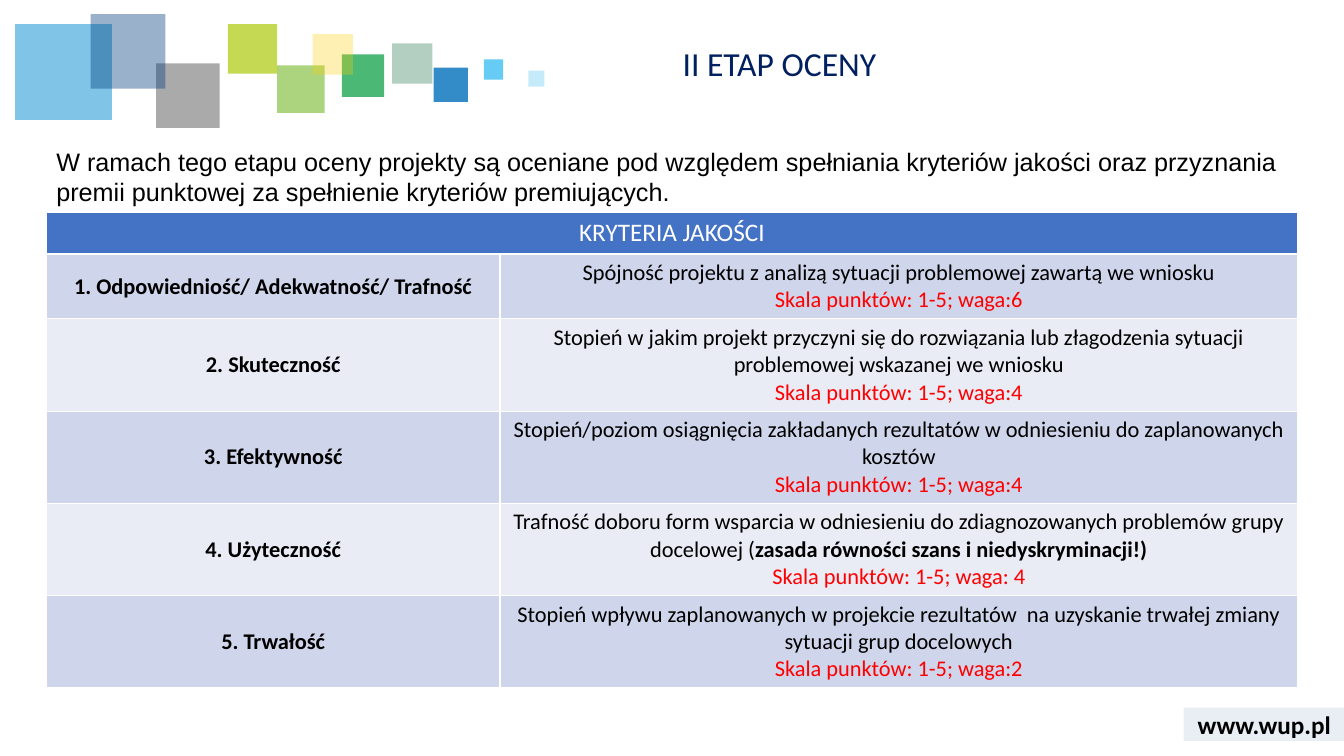
from dataclasses import dataclass

from lxml import etree
from pptx import Presentation
from pptx import util as u
from pptx.dml.color import RGBColor
from pptx.enum import shapes, text
from pptx.oxml.ns import qn

PX = 9144  # EMU per px, 100 px to the inch


@dataclass(frozen=True)
class Theme:
    ink: str = "000000"
    white: str = "FFFFFF"
    navy: str = "002060"
    red: str = "FF0000"
    head: str = "4472C4"
    bands: tuple[str, str] = ("CFD5EA", "E9EBF5")
    bar: str = "2F5597"
    sans: str = "Calibri"
    plain: str = "Arial"
    title: int = 24
    body: int = 18
    cell: int = 16


@dataclass(frozen=True)
class Tile:
    x: int
    y: int
    w: int
    h: int
    color: str
    alpha: int  # opacity in percent


@dataclass(frozen=True)
class Rule:
    name: str
    desc: str
    scale: str
    stress: str = ""


THEME = Theme()

TILES = [
    Tile(389, 43, 40, 40, "006138", 30),
    Tile(430, 67, 34, 34, "006EB9", 80),
    Tile(339, 54, 42, 42, "009A3C", 70),
    Tile(15, 24, 96, 95, "028BD3", 50),
    Tile(275, 65, 47, 47, "75B82A", 60),
    Tile(155, 63, 63, 64, "575757", 50),
    Tile(90, 14, 74, 74, "003D7C", 40),
    Tile(480, 59, 19, 20, "40C0F1", 80),
    Tile(226, 24, 49, 49, "AFCA0B", 70),
    Tile(310, 34, 40, 40, "FED000", 30),
    Tile(524, 70, 16, 16, "40C0F1", 30),
]
BAR = Tile(1174, 702, 160, 33, THEME.bar, 10)

RULES = [
    Rule("1. Odpowiedniość/ Adekwatność/ Trafność",
         "Spójność projektu z analizą sytuacji problemowej zawartą we wniosku",
         "Skala punktów: 1-5; waga:6"),
    Rule("2. Skuteczność",
         "Stopień w jakim projekt przyczyni się do rozwiązania lub złagodzenia "
         "sytuacji problemowej wskazanej we wniosku",
         "Skala punktów: 1-5; waga:4"),
    Rule("3. Efektywność",
         "Stopień/poziom osiągnięcia zakładanych rezultatów w odniesieniu do "
         "zaplanowanych kosztów",
         "Skala punktów: 1-5; waga:4"),
    Rule("4. Użyteczność",
         "Trafność doboru form wsparcia w odniesieniu do zdiagnozowanych "
         "problemów grupy docelowej (",
         "Skala punktów: 1-5; waga: 4",
         "zasada równości szans i niedyskryminacji!)"),
    Rule("5. Trwałość",
         "Stopień wpływu zaplanowanych w projekcie rezultatów  na uzyskanie "
         "trwałej zmiany sytuacji grup docelowych",
         "Skala punktów: 1-5; waga:2"),
]
COLS = [450, 791]
ROWS = [41, 64] + [91] * 4


def style(para, size: int, color: str, face: str = THEME.sans,
          bold: bool | None = False, center: bool = True) -> None:
    font = para.font
    font.size, font.name = u.Pt(size), face
    if bold is not None:
        font.bold = bold
    font.color.rgb = RGBColor.from_string(color)
    para.alignment = text.PP_ALIGN.CENTER if center else text.PP_ALIGN.LEFT


def place(shape, x: int, y: int, w: int, h: int) -> None:
    shape.left, shape.top = x * PX, y * PX
    shape.width, shape.height = w * PX, h * PX


def draw_tile(slide, tile: Tile):
    box = slide.shapes.add_shape(
        shapes.MSO_SHAPE.RECTANGLE,
        tile.x * PX, tile.y * PX, tile.w * PX, tile.h * PX)
    box.shadow.inherit = False
    box.line.fill.background()
    box.fill.solid()
    box.fill.fore_color.rgb = RGBColor.from_string(tile.color)
    color = box.fill._xPr.find(".//" + qn("a:srgbClr"))
    etree.SubElement(color, qn("a:alpha"), val=str(tile.alpha * 1000))
    return box


def paint(cell, color: str) -> None:
    """Give a cell white borders and a flat fill."""
    props = cell._tc.get_or_add_tcPr()
    for side in ("lnL", "lnR", "lnT", "lnB"):
        line = etree.SubElement(props, qn(f"a:{side}"), w=str(u.Pt(1)))
        fill = etree.SubElement(line, qn("a:solidFill"))
        etree.SubElement(fill, qn("a:srgbClr"), val=THEME.white)
    cell.fill.solid()
    cell.fill.fore_color.rgb = RGBColor.from_string(color)


def draw_table(slide) -> None:
    frame = slide.shapes.add_table(
        len(ROWS), len(COLS), 46 * PX, 211 * PX, sum(COLS) * PX, sum(ROWS) * PX)
    table = frame.table
    for col, width in zip(table.columns, COLS):
        col.width = width * PX
    for row, height in zip(table.rows, ROWS):
        row.height = height * PX

    # Header across both columns
    head = table.cell(0, 0)
    head.merge(table.cell(0, 1))
    for cell in table.rows[0].cells:
        paint(cell, THEME.head)
    head.text = "KRYTERIA JAKOŚCI"
    style(head.text_frame.paragraphs[0], THEME.body, THEME.white)

    # One row per criterion
    for i, rule in enumerate(RULES):
        name, desc = table.rows[i + 1].cells
        for cell in (name, desc):
            paint(cell, THEME.bands[i % 2])
        name.text = rule.name
        name.vertical_anchor = text.MSO_ANCHOR.MIDDLE
        style(name.text_frame.paragraphs[0], THEME.cell, THEME.ink, bold=True)
        desc.text = rule.desc
        first = desc.text_frame.paragraphs[0]
        style(first, THEME.cell, THEME.ink)
        if rule.stress:
            run = first.add_run()
            run.text, run.font.bold = rule.stress, True
        score = desc.text_frame.add_paragraph()
        score.text = rule.scale
        style(score, THEME.cell, THEME.red)


def main() -> None:
    deck = Presentation()
    deck.slide_width, deck.slide_height = 1333 * PX, 750 * PX
    slide = deck.slides.add_slide(deck.slide_layouts[5])

    # Title
    title = slide.shapes.title
    place(title, 667, 42, 636, 55)
    title.text = "II ETAP OCENY"
    title.text_frame.vertical_anchor = text.MSO_ANCHOR.TOP
    para = title.text_frame.paragraphs[0]
    para.line_spacing = 0.9
    style(para, THEME.title, THEME.navy, center=False)

    # Coloured squares and the address bar
    for tile in TILES:
        draw_tile(slide, tile)
    bar = draw_tile(slide, BAR).text_frame
    bar.text = "www.wup.pl"
    bar.word_wrap = False
    bar.vertical_anchor = text.MSO_ANCHOR.MIDDLE
    style(bar.paragraphs[0], THEME.body, THEME.ink, bold=True)

    # Criteria and lead text
    draw_table(slide)
    lead = slide.shapes.add_textbox(46 * PX, 140 * PX, 1241 * PX, 71 * PX)
    lead.text_frame.word_wrap = True
    lead.text_frame.text = (
        "W ramach tego etapu oceny projekty są oceniane pod względem spełniania "
        "kryteriów jakości oraz przyznania premii punktowej za spełnienie "
        "kryteriów premiujących.")
    style(lead.text_frame.paragraphs[0], THEME.body, THEME.ink, THEME.plain,
          center=False)

    deck.save("out.pptx")


if __name__ == "__main__":
    main()
